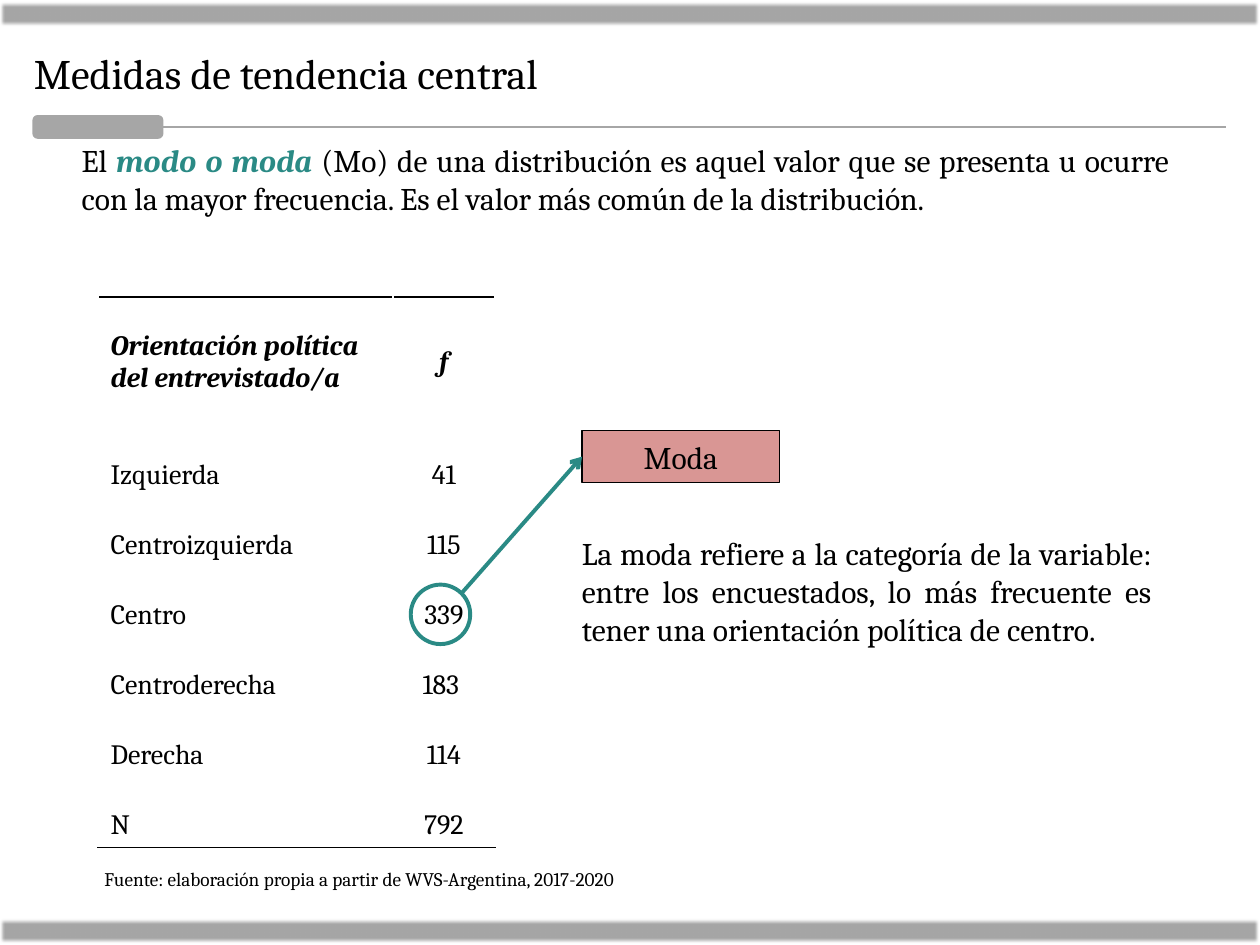
"""Builds a slide that explains the mode with a frequency table."""
from dataclasses import dataclass

from lxml import etree
from pptx import Presentation
from pptx.dml.color import RGBColor
from pptx.enum.shapes import MSO_CONNECTOR, MSO_SHAPE
from pptx.enum.text import MSO_ANCHOR, PP_ALIGN
from pptx.oxml import parse_xml
from pptx.oxml.ns import nsdecls, qn
from pptx.util import Pt

LEFT, CENTER, JUSTIFY = PP_ALIGN.LEFT, PP_ALIGN.CENTER, PP_ALIGN.JUSTIFY
TOP, MIDDLE, BOTTOM = MSO_ANCHOR.TOP, MSO_ANCHOR.MIDDLE, MSO_ANCHOR.BOTTOM
RECTANGLE, ROUNDED, OVAL = MSO_SHAPE.RECTANGLE, MSO_SHAPE.ROUNDED_RECTANGLE, MSO_SHAPE.OVAL
STRAIGHT = MSO_CONNECTOR.STRAIGHT
TITLE_ONLY = 5


@dataclass(frozen=True)
class Theme:
    font: str = "Cambria"
    ink: str = "000000"
    accent: str = "2A8A85"
    gray: str = "A6A6A6"
    pink: str = "D99694"
    title: int = 24
    body: int = 18
    table: int = 16
    source: int = 11


THEME = Theme()
TITLE = "Medidas de tendencia central"
DEFINITION = [
    ("El ", {}),
    ("modo o moda ", {"color": THEME.accent, "bold": True, "italic": True}),
    ("(Mo) de una distribución es aquel valor que se presenta u ocurre con la mayor "
     "frecuencia. Es el valor más común de la distribución. ", {}),
]
EXPLANATION = ("La moda refiere a la categoría de la variable: entre los encuestados, "
               "lo más frecuente es tener una orientación política de centro. ")
MODE_LABEL = "Moda"
SOURCE = "Fuente: elaboración propia a partir de WVS-Argentina, 2017-2020"
TABLE_ROWS = [
    ("Orientación política del entrevistado/a", "f"),
    ("Izquierda", "41"),
    ("Centroizquierda", "115"),
    ("Centro", "339"),
    ("Centroderecha", "183 "),
    ("Derecha", "114"),
    ("N", "792"),
]
TABLE_LEFT, TABLE_TOP = 56, 169.8
COLUMN_WIDTHS = (168.5, 58.3)
HEADER_HEIGHT, ROW_HEIGHT = 74.4, 40
SLIDE_WIDTH, SLIDE_HEIGHT = 720, 540
BAR_HEIGHT, BAR_MARGIN = 14.4, 0.7


def write(frame, text, size=THEME.body, align=LEFT, anchor=TOP, space_before=0, **style):
    """Fill a text frame with a string or a list of (text, style) runs."""
    frame.word_wrap = True
    frame.vertical_anchor = anchor
    paragraph = frame.paragraphs[0]
    paragraph.alignment = align
    paragraph.space_before = Pt(space_before)
    for words, extra in [(text, {})] if isinstance(text, str) else text:
        look = {**style, **extra}
        run = paragraph.add_run()
        run.text = words
        run.font.name = THEME.font
        run.font.size = Pt(size)
        run.font.bold = look.get("bold", False)
        run.font.italic = look.get("italic", False)
        run.font.color.rgb = RGBColor.from_string(look.get("color", THEME.ink))


def add_text(slide, box, text, **style):
    write(slide.shapes.add_textbox(*map(Pt, box)).text_frame, text, **style)


def add_shape(slide, kind, box, fill=None, line=None, width=1):
    shape = slide.shapes.add_shape(kind, *map(Pt, box))
    shape.shadow.inherit = False
    if fill:
        shape.fill.solid()
        shape.fill.fore_color.rgb = RGBColor.from_string(fill)
    else:
        shape.fill.background()
    if line:
        shape.line.color.rgb = RGBColor.from_string(line)
        shape.line.width = Pt(width)
    else:
        shape.line.fill.background()
    return shape


def add_bar(slide, top):
    bar = add_shape(slide, RECTANGLE, (0, top, SLIDE_WIDTH, BAR_HEIGHT), THEME.gray)
    effects = bar._element.spPr.find(qn("a:effectLst"))
    etree.SubElement(effects, qn("a:softEdge"), rad=str(Pt(2)))


def add_line(slide, start, end, color, width):
    line = slide.shapes.add_connector(STRAIGHT, *map(Pt, (*start, *end)))
    line.line.color.rgb = RGBColor.from_string(color)
    line.line.width = Pt(width)
    etree.SubElement(line._element.spPr, qn("a:effectLst"))
    return line


def add_border(cell, side):
    border = parse_xml(
        f'<a:{side} {nsdecls("a")} w="{Pt(1)}"><a:solidFill>'
        f'<a:srgbClr val="{THEME.ink}"/></a:solidFill></a:{side}>')
    cell._tc.get_or_add_tcPr().insert(0, border)


def add_frequency_table(slide):
    last = len(TABLE_ROWS) - 1
    box = (TABLE_LEFT, TABLE_TOP, sum(COLUMN_WIDTHS), HEADER_HEIGHT + last * ROW_HEIGHT)
    table = slide.shapes.add_table(
        len(TABLE_ROWS), len(COLUMN_WIDTHS), *map(Pt, box)).table
    table.first_row = table.horz_banding = False
    for column, width in zip(table.columns, COLUMN_WIDTHS):
        column.width = Pt(width)
    for index, values in enumerate(TABLE_ROWS):
        header = index == 0
        table.rows[index].height = Pt(HEADER_HEIGHT if header else ROW_HEIGHT)
        for position, value in enumerate(values):
            cell = table.cell(index, position)
            cell.fill.background()
            write(cell.text_frame, value, size=THEME.table, bold=header, italic=header,
                  align=CENTER if position else LEFT)
            cell.vertical_anchor = MIDDLE if header else BOTTOM
            if header:
                add_border(cell, "lnT")
            if index == last:
                add_border(cell, "lnB")


def add_heading(slide):
    title = slide.shapes.title
    title.left, title.top, title.width, title.height = map(Pt, (12.2, 23.8, 688, 36))
    write(title.text_frame, TITLE, size=THEME.title, anchor=MIDDLE)
    add_shape(slide, ROUNDED, (19.6, 66.8, 72.8, 11.5), THEME.gray, THEME.gray, 2)
    add_line(slide, (88.6, 72.7), (700.4, 72.7), THEME.gray, 1.25)


def add_mode_callout(slide):
    label = add_shape(slide, RECTANGLE, (332.6, 246.2, 113, 29.5), THEME.pink, THEME.ink, 0.75)
    write(label.text_frame, MODE_LABEL, align=CENTER, anchor=MIDDLE, space_before=3.6)
    add_shape(slide, OVAL, (234.7, 334.1, 34, 34), line=THEME.accent, width=2.25)
    arrow = add_line(slide, (263.7, 339.1), (332.6, 261), THEME.accent, 2.25)
    arrow.end_connect(label, 1)
    etree.SubElement(arrow.line._get_or_add_ln(), qn("a:tailEnd"), type="arrow")


def main():
    presentation = Presentation()
    presentation.slide_width, presentation.slide_height = Pt(SLIDE_WIDTH), Pt(SLIDE_HEIGHT)
    slide = presentation.slides.add_slide(presentation.slide_layouts[TITLE_ONLY])
    for top in (BAR_MARGIN, SLIDE_HEIGHT - BAR_MARGIN - BAR_HEIGHT):
        add_bar(slide, top)
    add_heading(slide)
    add_frequency_table(slide)
    add_mode_callout(slide)
    add_text(slide, (39.6, 77, 635.8, 51), DEFINITION, align=JUSTIFY)
    add_text(slide, (325.4, 301.7, 339.8, 116.6), EXPLANATION, align=JUSTIFY)
    add_text(slide, (52.6, 491.8, 339.8, 20.9), SOURCE, size=THEME.source, align=JUSTIFY)
    presentation.save("out.pptx")


if __name__ == "__main__":
    main()
